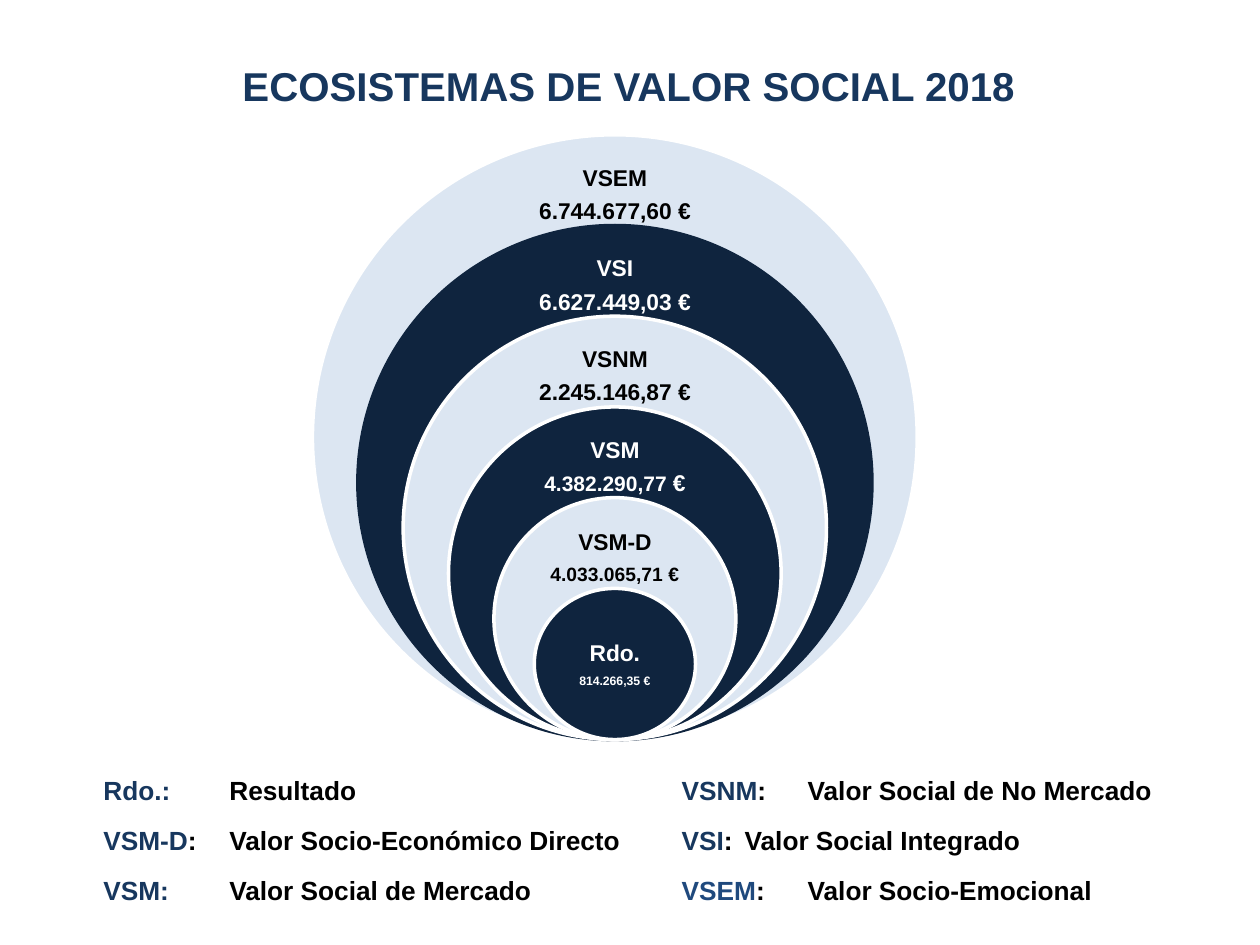
"""Build the slide on social value ecosystems."""
from lxml import etree
from pptx import Presentation
from pptx.dml.color import RGBColor
from pptx.enum.shapes import MSO_SHAPE
from pptx.enum.text import MSO_ANCHOR, MSO_AUTO_SIZE, PP_ALIGN
from pptx.oxml.ns import qn
from pptx.util import Inches, Pt

OVAL = MSO_SHAPE.OVAL
TOP, MIDDLE = MSO_ANCHOR.TOP, MSO_ANCHOR.MIDDLE
LEFT, CENTER = PP_ALIGN.LEFT, PP_ALIGN.CENTER
FIXED = MSO_AUTO_SIZE.NONE
FONT = "Arial"
BLUE, NAVY, PALE = "17375E", "0F243E", "DCE6F2"
WHITE, BLACK = "FFFFFF", "000000"
MID, BASE, STEP = 4.88, 5.87, 0.72

# label, [(value text, size)], text width
RINGS = [
    ("VSEM", [("6.744.677,60 €", 13)], 1.8),
    ("VSI", [("6.627.449,03 €", 13)], 1.76),
    ("VSNM", [("2.245.146,87 €", 13)], 1.74),
    ("VSM", [("4.382.290,77 ", 12), ("€", 13)], 1.43),
    ("VSM-D", [("4.033.065,71 €", 11)], 1.25),
    ("Rdo.", [("814.266,35 €", 7)], 0.9),
]
KEYS_LEFT = [
    ("Rdo.:", "\tResultado", BLUE),
    ("VSM-D", ":\tValor Socio-Económico Directo", BLUE),
    ("VSM:", "\tValor Social de Mercado", BLUE),
]
KEYS_RIGHT = [
    ("VSNM", ":\tValor Social de No Mercado", BLUE),
    ("VSI", ":\tValor Social Integrado", BLUE),
    ("VSEM", ":\tValor Socio-Emocional", "1F497D"),
]


def paint(target, color):
    """Give a fill or line a solid colour from a hex string."""
    target.fill.solid()
    target.fill.fore_color.rgb = RGBColor.from_string(color)


def write(par, text, size=13, color=BLACK):
    """Add a bold run to a paragraph."""
    run = par.add_run()
    run.text = text
    run.font.name, run.font.size, run.font.bold = FONT, Pt(size), True
    paint(run.font, color)


def place(shape, left, top, width, height):
    """Move and size a shape in inches."""
    shape.left, shape.top = Inches(left), Inches(top)
    shape.width, shape.height = Inches(width), Inches(height)


def lines(frame, count, anchor, align, gap):
    """Set up a text frame and return its paragraphs."""
    frame.word_wrap, frame.auto_size = True, FIXED
    frame.vertical_anchor = anchor
    pars = [frame.paragraphs[0]]
    pars += [frame.add_paragraph() for _ in range(count - 1)]
    for par in pars:
        par.alignment, par.line_spacing = align, gap
    return pars


def set_tab(par, pos):
    """Drop the bullet and add one left tab stop."""
    props = par._p.get_or_add_pPr()
    props.set("marL", "0")
    props.set("indent", "0")
    etree.SubElement(props, qn("a:buNone"))
    tabs = etree.SubElement(props, qn("a:tabLst"))
    etree.SubElement(tabs, qn("a:tab"), pos=str(Inches(pos)), algn="l")


def add_title(shape, text):
    """Fill the title placeholder."""
    place(shape, 1.51, 0.32, 6.97, 0.55)
    par, = lines(shape.text_frame, 1, TOP, CENTER, 1.3)
    write(par, text, size=23, color=BLUE)


def add_keys(shape, keys, left, width, tab):
    """Fill a body placeholder with one column of the key."""
    place(shape, left, 5.97, width, 1.19)
    pars = lines(shape.text_frame, len(keys), TOP, LEFT, 1.5)
    for par, (term, sense, color) in zip(pars, keys):
        par.space_before = Pt(1.7)
        set_tab(par, tab)
        write(par, term, size=15, color=color)
        write(par, sense, size=15)


def add_ring(shapes, width, height, fill, edge):
    """Draw one circle that rests on the common base."""
    ring = shapes.add_shape(OVAL, Inches(MID - width / 2), Inches(BASE - height),
                            Inches(width), Inches(height))
    ring.shadow.inherit = False
    paint(ring, fill)
    paint(ring.line, edge)
    ring.line.width = Pt(2)


def add_label(shapes, label, value, width, top, height, color):
    """Add the name and value of a circle."""
    box = shapes.add_textbox(Inches(MID - width / 2), Inches(top),
                             Inches(width), Inches(height))
    frame = box.text_frame
    frame.margin_top = frame.margin_bottom = Inches(0.1)
    pars = lines(frame, 2, MIDDLE, CENTER, 0.9)
    for par in pars:
        par.space_after = Pt(5)
    write(pars[0], label, color=color)
    for text, size in value:
        write(pars[1], text, size=size, color=color)


def main():
    """Build and save the slide."""
    deck = Presentation()
    deck.slide_width, deck.slide_height = Inches(10), Inches(7.5)
    slide = deck.slides.add_slide(deck.slide_layouts[3])
    title, left, right = slide.placeholders
    add_title(title, "ECOSISTEMAS DE VALOR SOCIAL 2018")
    add_keys(left, KEYS_LEFT, 0.72, 4.6, 0.88)
    add_keys(right, KEYS_RIGHT, 5.31, 4.25, 1)
    for i, (label, value, wide) in enumerate(RINGS):
        core = i == len(RINGS) - 1
        size = 4.8 - STEP * i
        width, height = (1.28, 1.2) if core else (size, size)
        fill, color = (NAVY, WHITE) if i % 2 else (PALE, BLACK)
        add_ring(slide.shapes, width, height, fill, NAVY if i == 1 else WHITE)
        drop, tall = (0.31, 0.6) if core else (0.24, 0.48)
        add_label(slide.shapes, label, value, wide, BASE - height + drop, tall, color)
    deck.save("out.pptx")


if __name__ == "__main__":
    main()
